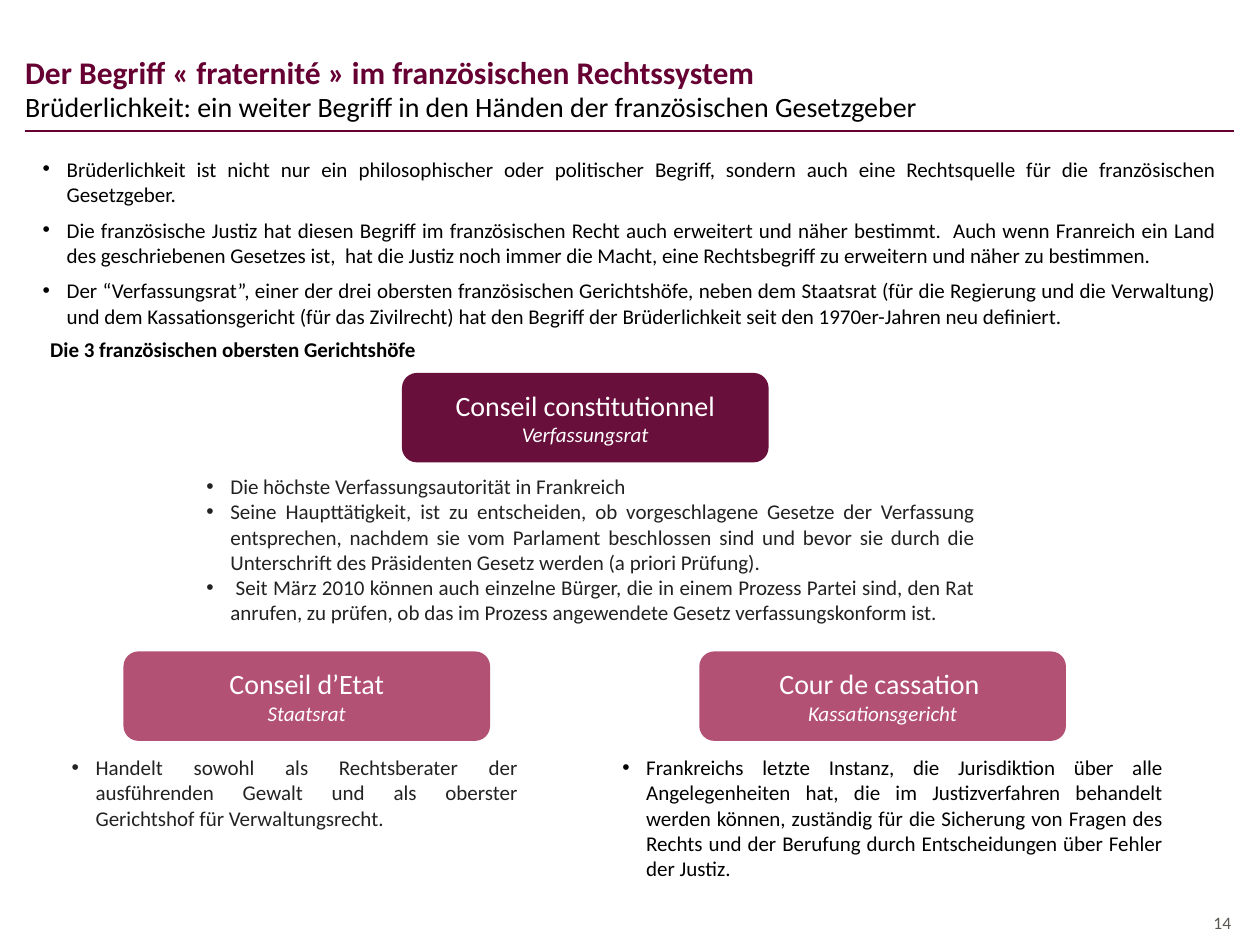
from lxml import etree
from pptx import Presentation
from pptx.dml.color import RGBColor
from pptx.enum.shapes import MSO_CONNECTOR, MSO_SHAPE
from pptx.enum.text import MSO_ANCHOR, PP_ALIGN
from pptx.oxml.ns import qn
from pptx.util import Inches, Pt

LEFT, CENTER, RIGHT, JUSTIFY = PP_ALIGN.LEFT, PP_ALIGN.CENTER, PP_ALIGN.RIGHT, PP_ALIGN.JUSTIFY
TOP, MIDDLE = MSO_ANCHOR.TOP, MSO_ANCHOR.MIDDLE
ROUNDED, STRAIGHT = MSO_SHAPE.ROUNDED_RECTANGLE, MSO_CONNECTOR.STRAIGHT

FONT = "Calibri"
PLUM = RGBColor(0x66, 0x00, 0x33)
DARK_PLUM = RGBColor(0x69, 0x0F, 0x3C)
ROSE = RGBColor(0xB3, 0x51, 0x74)
BLACK = RGBColor(0, 0, 0)
CHARCOAL = RGBColor(0x22, 0x22, 0x22)
GREY = RGBColor(0x5C, 0x58, 0x51)
WHITE = RGBColor(0xFF, 0xFF, 0xFF)

# Content
TITLE = "Der Begriff « fraternité » im französischen Rechtssystem"
SUBTITLE = "Brüderlichkeit: ein weiter Begriff in den Händen der französischen Gesetzgeber"
INTRO = [
    "Brüderlichkeit ist nicht nur ein philosophischer oder politischer Begriff, sondern auch "
    "eine Rechtsquelle für die französischen Gesetzgeber.",
    "Die französische Justiz hat diesen Begriff im französischen Recht auch erweitert und näher "
    "bestimmt.  Auch wenn Franreich ein Land des geschriebenen Gesetzes ist,  hat die Justiz noch "
    "immer die Macht, eine Rechtsbegriff zu erweitern und näher zu bestimmen.",
    "Der “Verfassungsrat”, einer der drei obersten französischen Gerichtshöfe, neben dem Staatsrat "
    "(für die Regierung und die Verwaltung) und dem Kassationsgericht (für das Zivilrecht) hat den "
    "Begriff der Brüderlichkeit seit den 1970er-Jahren neu definiert.",
]
HEADING = "Die 3 französischen obersten Gerichtshöfe"
PAGE_NUMBER = "14"

# Each court: names, card left and top, card fill, notes, notes area, notes colour
COURTS = [
    ("Conseil constitutionnel", "Verfassungsrat", 3.19, 2.96, DARK_PLUM, [
        "Die höchste Verfassungsautorität in Frankreich",
        "Seine Haupttätigkeit, ist zu entscheiden, ob vorgeschlagene Gesetze der Verfassung "
        "entsprechen, nachdem sie vom Parlament beschlossen sind und bevor sie durch die "
        "Unterschrift des Präsidenten Gesetz werden (a priori Prüfung).",
        " Seit März 2010 können auch einzelne Bürger, die in einem Prozess Partei sind, den Rat "
        "anrufen, zu prüfen, ob das im Prozess angewendete Gesetz verfassungskonform ist.",
    ], (1.54, 3.71, 6.3, 1.31), CHARCOAL),
    ("Conseil d’Etat", "Staatsrat", 0.98, 5.17, ROSE, [
        "Handelt sowohl als Rechtsberater der ausführenden Gewalt und als oberster Gerichtshof "
        "für Verwaltungsrecht.",
    ], (0.47, 5.94, 3.74, 0.71), CHARCOAL),
    ("Cour de cassation ", "Kassationsgericht", 5.55, 5.17, ROSE, [
        "Frankreichs letzte Instanz, die Jurisdiktion über alle Angelegenheiten hat, die im "
        "Justizverfahren behandelt werden können, zuständig für die Sicherung von Fragen des "
        "Rechts und der Berufung durch Entscheidungen über Fehler der Justiz.",
    ], (4.84, 5.94, 4.49, 1.11), BLACK),
]
CARD_WIDTH, CARD_HEIGHT = 2.91, 0.71
BULLET_INDENT = Inches(0.19)


def add_paragraph(frame, text, size=12, color=BLACK, bold=False, italic=False,
                  align=LEFT, bullet=False, after=0):
    first = frame.paragraphs[0]
    para = frame.add_paragraph() if first.runs else first
    para.alignment = align
    para.space_after = Pt(after)
    span = para.add_run()
    span.text = text
    font = span.font
    font.name, font.size, font.bold, font.italic = FONT, Pt(size), bold, italic
    font.color.rgb = color
    if bullet:
        properties = para._p.get_or_add_pPr()
        properties.set("marL", str(BULLET_INDENT))
        properties.set("indent", str(-BULLET_INDENT))
        etree.SubElement(properties, qn("a:buFont")).set("typeface", "Arial")
        etree.SubElement(properties, qn("a:buChar")).set("char", "•")


def add_text(page, area, texts, left_inset=0.1, right_inset=0.1, **style):
    box = page.shapes.add_textbox(*map(Inches, area))
    frame = box.text_frame
    frame.word_wrap = True
    frame.vertical_anchor = TOP
    frame.margin_left, frame.margin_right = Inches(left_inset), Inches(right_inset)
    for text in texts:
        add_paragraph(frame, text, **style)


def add_card(page, left, top, fill, french, german):
    card = page.shapes.add_shape(ROUNDED, *map(Inches, (left, top, CARD_WIDTH, CARD_HEIGHT)))
    card.shadow.inherit = False
    card.fill.solid()
    card.fill.fore_color.rgb = fill
    card.line.fill.background()
    frame = card.text_frame
    frame.word_wrap = True
    frame.vertical_anchor = MIDDLE
    add_paragraph(frame, french, size=16, color=WHITE, align=CENTER)
    add_paragraph(frame, german, color=WHITE, italic=True, align=CENTER)


def main():
    deck = Presentation()
    deck.slide_width, deck.slide_height = Inches(10), Inches(7.5)
    page = deck.slides.add_slide(deck.slide_layouts[6])

    # Header and page number
    rule = page.shapes.add_connector(STRAIGHT, *map(Inches, (0.2, 1.04, 9.79, 1.04)))
    rule.line.color.rgb = PLUM
    rule.line.width = Pt(1)
    etree.SubElement(rule._element.spPr, qn("a:effectLst"))
    add_text(page, (6.38, 7.19, 3.39, 0.27), [PAGE_NUMBER], left_inset=0, right_inset=0,
             size=10, color=GREY, align=RIGHT)
    add_text(page, (0.2, 0.66, 9.6, 0.36), [SUBTITLE], left_inset=0, size=16)
    add_text(page, (0.2, 0.37, 9.6, 0.32), [TITLE], left_inset=0, size=18, color=PLUM, bold=True)

    # Introduction
    add_text(page, (0.24, 1.19, 9.52, 2.34), INTRO, align=JUSTIFY, bullet=True, after=6)
    add_text(page, (0.3, 2.62, 4.09, 0.3), [HEADING], bold=True)

    # Courts with their notes
    for french, german, left, top, fill, notes, area, color in COURTS:
        add_card(page, left, top, fill, french, german)
        add_text(page, area, notes, color=color, align=JUSTIFY, bullet=True)

    deck.save("out.pptx")


if __name__ == "__main__":
    main()
